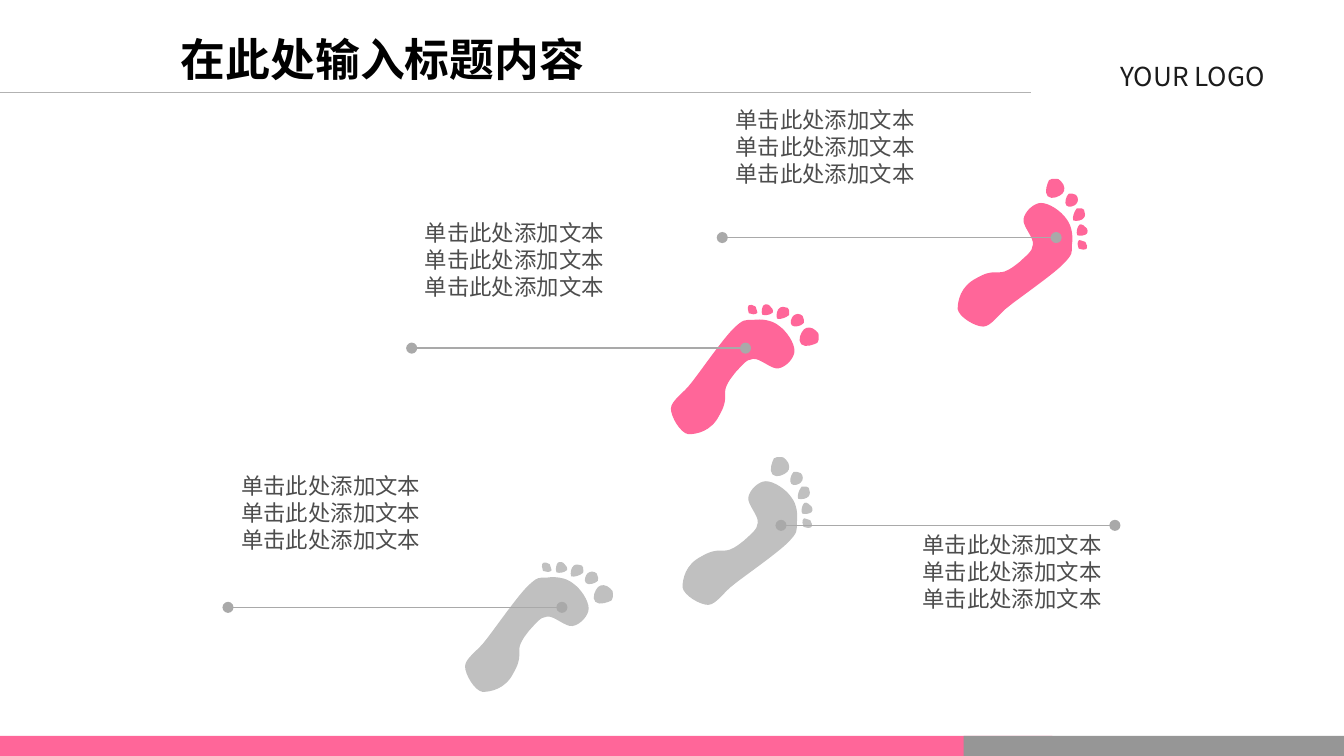
"""Build a slide of four footprints with labelled callouts."""
import dataclasses

import lxml.etree
import pptx
import pptx.dml.color
import pptx.enum.shapes
import pptx.enum.text
import pptx.oxml.ns
import pptx.util

Cm = pptx.util.Cm
qn = pptx.oxml.ns.qn
ALIGN = pptx.enum.text.PP_ALIGN


@dataclasses.dataclass(frozen=True)
class Theme:
    pink: str = "FF6699"
    footer_gray: str = "969696"
    foot_gray: str = "C0C0C0"
    rule_gray: str = "B2B2B2"
    callout_gray: str = "A9A9A9"
    title_ink: str = "000000"
    logo_ink: str = "1C1C1C"
    body_ink: str = "4D4D4D"
    title_font: str = "Times New Roman"
    logo_font: str = "Noto Sans CJK SC"
    body_font: str = "DejaVu Sans"
    east_asian_font: str = "DejaVu Sans"
    title_size: int = 24
    logo_size: int = 14
    body_size: int = 12
    line_width: float = 0.75


THEME = Theme()
LABEL = "单击此处添加文本"
LABEL_LINES = 3
CALLOUT_LENGTH = 6.31
FOOT_UNIT = 0.0254
FOOT_WIDTH, FOOT_HEIGHT = 96, 110

SMALL_TOES = [
    [(92, 46), (93, 46), (94, 46), (95, 47), (96, 49), (97, 51), (96, 52), (95, 53),
     (92, 53), (90, 52), (89, 50), (89, 47), (90, 46), (90, 46), (91, 45), (92, 46)],
    [(92, 34), (93, 34), (94, 35), (95, 36), (97, 37), (97, 40), (96, 41), (95, 42),
     (91, 43), (89, 42), (88, 40), (89, 36), (90, 35), (90, 34), (91, 34), (92, 34)],
    [(90, 22), (92, 22), (93, 22), (94, 23), (95, 25), (95, 28), (94, 29), (93, 31),
     (88, 32), (86, 31), (85, 29), (87, 24), (88, 23), (88, 22), (89, 22), (90, 22)],
    [(85, 11), (86, 11), (87, 11), (88, 12), (90, 14), (90, 17), (88, 19), (87, 20),
     (83, 22), (81, 20), (79, 18), (81, 13), (82, 12), (82, 11), (83, 11), (85, 11)],
]
BIG_TOE = [
    (73, 0), (74, 0), (76, 0), (77, 2), (80, 5), (80, 9), (78, 11), (76, 13),
    (70, 16), (67, 13), (64, 10), (67, 3), (68, 1), (69, 0), (71, 0), (73, 0),
]
SOLE = [
    (62, 18), (68, 18), (77, 24), (81, 30), (85, 35), (86, 43), (85, 49),
    (85, 55), (86, 56), (78, 64), (70, 72), (44, 90), (38, 95),
    (31, 100), (25, 110), (19, 110), (13, 110), (1, 103), (0, 97),
    (0, 91), (2, 80), (14, 74), (26, 67), (29, 71), (35, 69),
    (40, 67), (42, 65), (46, 62), (50, 58), (56, 54), (56, 49),
    (57, 44), (48, 35), (49, 30), (50, 24), (57, 18), (62, 18),
]
FOOT = [*SMALL_TOES, SOLE, BIG_TOE]


def rgb(value):
    """Return the colour for a hex value."""
    return pptx.dml.color.RGBColor.from_string(value)


def paint(shape, color):
    """Give a shape a flat fill without line or shadow."""
    shape.shadow.inherit = False
    shape.fill.solid()
    shape.fill.fore_color.rgb = rgb(color)
    shape.line.fill.background()


def add_bar(slide, left, width, color):
    """Add a footer bar."""
    bar = slide.shapes.add_shape(pptx.enum.shapes.MSO_SHAPE.RECTANGLE,
                                 Cm(left), Cm(13.91), Cm(width), Cm(0.38))
    paint(bar, color)


def add_text(slide, box, lines, font_name, size, color, align, bold=False):
    """Add a text box with one paragraph for each line."""
    frame = slide.shapes.add_textbox(*map(Cm, box)).text_frame
    frame.word_wrap = True
    frame.text = "\n".join(lines)
    for paragraph in frame.paragraphs:
        paragraph.alignment = align
        font = paragraph.font
        font.name, font.size, font.bold = font_name, pptx.util.Pt(size), bold
        font.color.rgb = rgb(color)
        lxml.etree.SubElement(font._element, qn("a:ea"),
                              typeface=THEME.east_asian_font)


def add_rule(slide, left, top, length, color, dotted_ends=False):
    """Add a horizontal line, with round ends if asked."""
    rule = slide.shapes.add_connector(pptx.enum.shapes.MSO_CONNECTOR.STRAIGHT,
                                      Cm(left), Cm(top), Cm(left + length), Cm(top))
    rule.line.color.rgb = rgb(color)
    rule.line.width = pptx.util.Pt(THEME.line_width)
    if dotted_ends:
        for end in ("a:headEnd", "a:tailEnd"):
            lxml.etree.SubElement(rule.line._get_or_add_ln(), qn(end), type="oval")
    lxml.etree.SubElement(rule._element.spPr, qn("a:effectLst"))


def curve(shape):
    """Turn each three line segments of a freeform into one cubic curve."""
    segments = list(shape._element.iter(qn("a:lnTo")))
    for start in range(0, len(segments), 3):
        first, *others = segments[start:start + 3]
        cubic = lxml.etree.Element(qn("a:cubicBezTo"))
        first.addprevious(cubic)
        for segment in (first, *others):
            cubic.append(segment[0])
            segment.getparent().remove(segment)


def add_foot(slide, left, top, color, mirrored):
    """Add a footprint, mirrored across its diagonal for the other foot."""
    def place(point):
        """Return the slide position of a foot point."""
        x, y = point
        if mirrored:
            x, y = FOOT_HEIGHT - y, FOOT_WIDTH - x
        return Cm(left + x * FOOT_UNIT), Cm(top + y * FOOT_UNIT)

    parts = [[place(point) for point in outline] for outline in FOOT]
    builder = slide.shapes.build_freeform(*parts[0][0])
    for index, part in enumerate(parts):
        if index:
            builder.move_to(*part[0])
        builder.add_line_segments(part[1:], close=True)
    foot = builder.convert_to_shape()
    curve(foot)
    paint(foot, color)


def main():
    """Build and save the slide."""
    deck = pptx.Presentation()
    deck.slide_width, deck.slide_height = Cm(25.4), Cm(14.29)
    slide = deck.slides.add_slide(deck.slide_layouts[6])

    add_rule(slide, 0, 1.75, 19.48, THEME.rule_gray)
    add_text(slide, (19.9, 1.02, 5.28, 0.84), ["YOUR LOGO"], THEME.logo_font,
             THEME.logo_size, THEME.logo_ink, ALIGN.CENTER)
    add_bar(slide, 0, 19.89, THEME.pink)
    add_bar(slide, 18.21, 7.19, THEME.footer_gray)
    add_text(slide, (2.33, 0.48, 9.8, 1.27), ["在此处输入标题内容"], THEME.title_font,
             THEME.title_size, THEME.title_ink, ALIGN.CENTER, bold=True)

    for left, top, color, mirrored in (
        (12.9, 8.64, THEME.foot_gray, False),
        (18.1, 3.38, THEME.pink, False),
        (12.68, 5.77, THEME.pink, True),
        (8.79, 10.64, THEME.foot_gray, True),
    ):
        add_foot(slide, left, top, color, mirrored)

    for left, top, width, align, rule_left, rule_top in (
        (16.32, 9.92, 4.75, ALIGN.RIGHT, 14.76, 9.93),
        (13.65, 1.89, 5, ALIGN.LEFT, 13.65, 4.49),
        (4.31, 8.8, 5.28, ALIGN.LEFT, 4.31, 11.48),
        (7.78, 4.02, 4.9, ALIGN.LEFT, 7.78, 6.58),
    ):
        add_text(slide, (left, top, width, 2.54), [LABEL] * LABEL_LINES,
                 THEME.body_font, THEME.body_size, THEME.body_ink, align)
        add_rule(slide, rule_left, rule_top, CALLOUT_LENGTH, THEME.callout_gray,
                 dotted_ends=True)

    deck.save("out.pptx")


if __name__ == "__main__":
    main()
